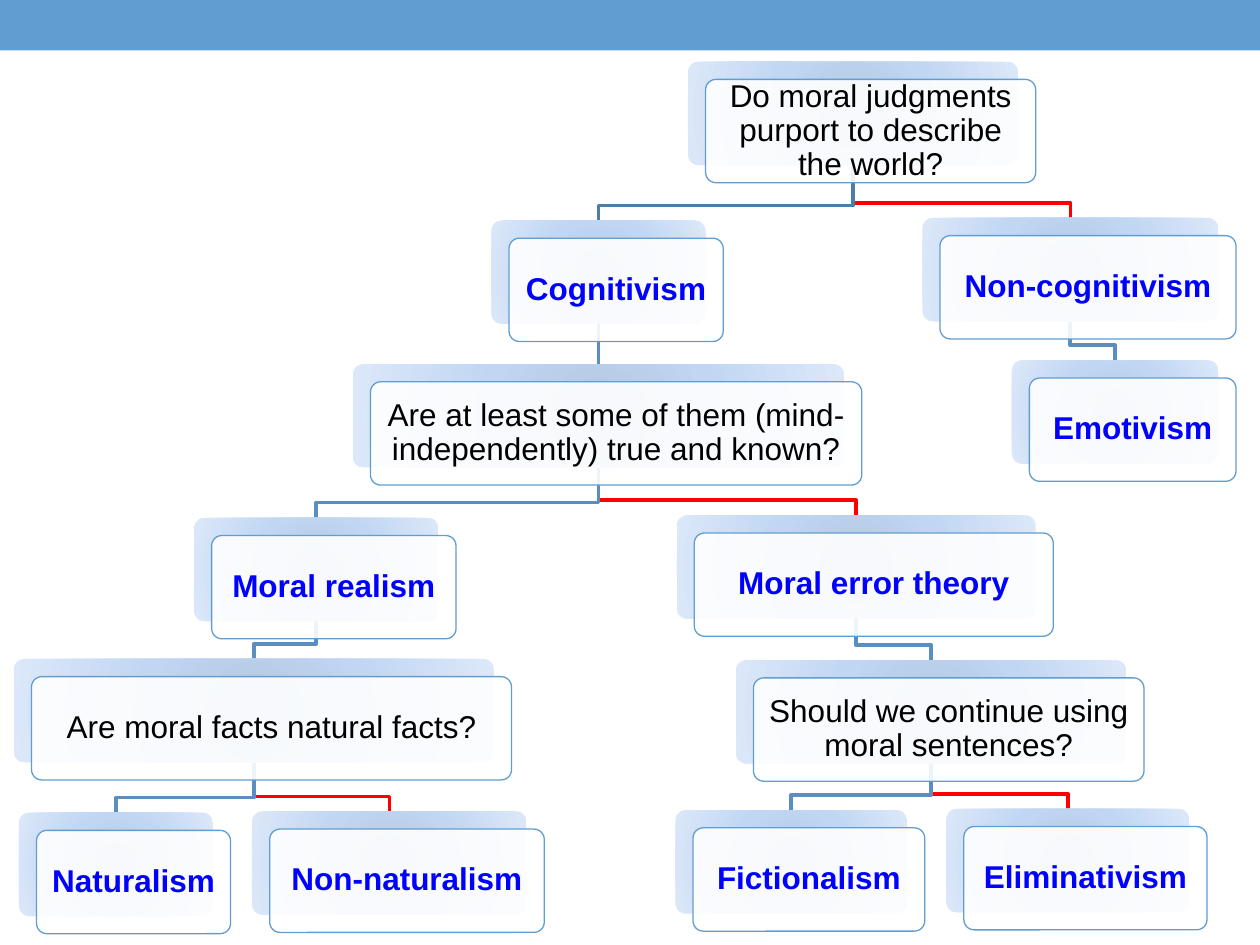
from dataclasses import dataclass

from pptx import Presentation
from pptx.dml.color import RGBColor
from pptx.enum.shapes import MSO_CONNECTOR, MSO_SHAPE
from pptx.enum.text import MSO_ANCHOR, PP_ALIGN
from pptx.oxml import parse_xml
from pptx.oxml.ns import nsdecls, qn
from pptx.util import Inches, Pt
from lxml.etree import SubElement


@dataclass(frozen=True)
class Theme:
    font: str = "Arial"
    text_size: float = 18
    branch_width: float = 2.08
    outline_width: float = 0.75
    accent: str = "629DD1"
    panel: str = "FFFFFF"
    question: str = "000000"
    position: str = "0000FF"
    root_branch: str = "4E7EA7"
    yes_branch: str = "598EBE"
    no_branch: str = "FF0000"
    gradient: tuple = ((0, "B2C7E1"), (45, "C0D6F3"), (100, "DCE8F9"))


@dataclass(frozen=True)
class Node:
    text: str
    left: float
    top: float
    width: float
    is_question: bool = False

    @property
    def center(self) -> float:
        return self.left + self.width / 2


@dataclass(frozen=True)
class Branch:
    parent: str
    child: str
    color: str


THEME = Theme()
NODE_HEIGHT = 0.82
PANEL_OFFSET = 0.14
TEXT_INSET = 0.02
ELBOW_RISE = 0.12

NODES = {
    "describe": Node("Do moral judgments purport to describe the world?", 5.46, 0.49, 2.62, True),
    "cognitivism": Node("Cognitivism", 3.9, 1.75, 1.7),
    "known": Node("Are at least some of them (mind-independently) true and known?", 2.8, 2.89, 3.9, True),
    "realism": Node("Moral realism", 1.54, 4.11, 1.94),
    "natural": Node("Are moral facts natural facts?", 0.11, 5.23, 3.81, True),
    "naturalism": Node("Naturalism", 0.15, 6.45, 1.54),
    "non-naturalism": Node("Non-naturalism", 2, 6.44, 2.18),
    "error": Node("Moral error theory", 5.37, 4.09, 2.85),
    "continue": Node("Should we continue using moral sentences?", 5.84, 5.24, 3.1, True),
    "fictionalism": Node("Fictionalism", 5.36, 6.43, 1.84),
    "eliminativism": Node("Eliminativism", 7.51, 6.42, 1.93),
    "non-cognitivism": Node("Non-cognitivism", 7.32, 1.73, 2.35),
    "emotivism": Node("Emotivism", 8.03, 2.86, 1.64),
}

BRANCHES = [
    Branch("non-cognitivism", "emotivism", THEME.yes_branch),
    Branch("describe", "non-cognitivism", THEME.no_branch),
    Branch("continue", "eliminativism", THEME.no_branch),
    Branch("continue", "fictionalism", THEME.yes_branch),
    Branch("error", "continue", THEME.yes_branch),
    Branch("known", "error", THEME.no_branch),
    Branch("natural", "non-naturalism", THEME.no_branch),
    Branch("natural", "naturalism", THEME.yes_branch),
    Branch("realism", "natural", THEME.yes_branch),
    Branch("known", "realism", THEME.yes_branch),
    Branch("cognitivism", "known", THEME.yes_branch),
    Branch("describe", "cognitivism", THEME.root_branch),
]


def add_box(slide, kind, left: float, top: float, width: float, height: float,
            fill: str | None = None, outline: str | None = None):
    shape = slide.shapes.add_shape(kind, Inches(left), Inches(top), Inches(width), Inches(height))
    shape.shadow.inherit = False
    if fill:
        shape.fill.solid()
        shape.fill.fore_color.rgb = RGBColor.from_string(fill)
    if outline:
        shape.line.color.rgb = RGBColor.from_string(outline)
        shape.line.width = Pt(THEME.outline_width)
    else:
        shape.line.fill.background()
    if kind == MSO_SHAPE.ROUNDED_RECTANGLE:
        shape.adjustments[0] = 0.1
    return shape


def add_text(slide, text: str, left: float, top: float, width: float, height: float,
             *, color: str, bold: bool = False) -> None:
    box = slide.shapes.add_textbox(Inches(left), Inches(top), Inches(width), Inches(height))
    frame = box.text_frame
    frame.word_wrap = True
    frame.vertical_anchor = MSO_ANCHOR.MIDDLE
    frame.margin_left = frame.margin_right = Inches(0.07)
    frame.margin_top = frame.margin_bottom = Inches(0.07)
    paragraph = frame.paragraphs[0]
    paragraph.alignment = PP_ALIGN.CENTER
    paragraph.line_spacing = 0.9
    run = paragraph.add_run()
    run.text = text
    run.font.name = THEME.font
    run.font.size = Pt(THEME.text_size)
    run.font.bold = bold
    run.font.color.rgb = RGBColor.from_string(color)


def set_radial_gradient(shape) -> None:
    stops = "".join(
        f'<a:gs pos="{position * 1000}"><a:srgbClr val="{color}"/></a:gs>'
        for position, color in THEME.gradient
    )
    gradient = parse_xml(
        f'<a:gradFill {nsdecls("a")} rotWithShape="1"><a:gsLst>{stops}</a:gsLst>'
        '<a:path path="circle"><a:fillToRect l="100000" t="100000" r="100000" b="100000"/>'
        "</a:path></a:gradFill>"
    )
    shape.element.spPr.find(qn("a:prstGeom")).addnext(gradient)


def add_node(slide, node: Node) -> None:
    # Gradient card at the back
    card = add_box(slide, MSO_SHAPE.ROUNDED_RECTANGLE, node.left, node.top, node.width, NODE_HEIGHT)
    set_radial_gradient(card)

    # Translucent panel, shifted down and right
    left, top = node.left + PANEL_OFFSET, node.top + PANEL_OFFSET
    panel = add_box(slide, MSO_SHAPE.ROUNDED_RECTANGLE, left, top, node.width, NODE_HEIGHT,
                    fill=THEME.panel, outline=THEME.accent)
    color = panel.element.spPr.find(qn("a:solidFill")).find(qn("a:srgbClr"))
    SubElement(color, qn("a:alpha")).set("val", "90000")

    # Label
    add_text(slide, node.text, left + TEXT_INSET, top + TEXT_INSET,
             node.width - 2 * TEXT_INSET, NODE_HEIGHT - 2 * TEXT_INSET,
             color=THEME.question if node.is_question else THEME.position,
             bold=not node.is_question)


def add_branch(slide, branch: Branch) -> None:
    parent, child = NODES[branch.parent], NODES[branch.child]
    start_x, start_y = Inches(parent.center), Inches(parent.top + NODE_HEIGHT)
    end_x, end_y = Inches(child.center), Inches(child.top)
    if start_x == end_x:
        line = slide.shapes.add_connector(MSO_CONNECTOR.STRAIGHT, start_x, start_y, end_x, end_y)
        SubElement(line.element.spPr, qn("a:effectLst"))
    else:
        elbow_y = Inches(child.top - ELBOW_RISE)
        builder = slide.shapes.build_freeform(start_x, start_y)
        builder.add_line_segments(
            [(start_x, elbow_y), (end_x, elbow_y), (end_x, end_y)], close=False)
        line = builder.convert_to_shape()
        line.fill.background()
        line.shadow.inherit = False
    line.line.color.rgb = RGBColor.from_string(branch.color)
    line.line.width = Pt(THEME.branch_width)


def main() -> None:
    presentation = Presentation()
    presentation.slide_width = Inches(10)
    presentation.slide_height = Inches(7.5)
    slide = presentation.slides.add_slide(presentation.slide_layouts[6])

    # Top band
    add_box(slide, MSO_SHAPE.RECTANGLE, 0, 0, 10, 0.4, fill=THEME.accent)

    # Decision tree: branches behind nodes
    for branch in BRANCHES:
        add_branch(slide, branch)
    for node in NODES.values():
        add_node(slide, node)

    presentation.save("out.pptx")


if __name__ == "__main__":
    main()
